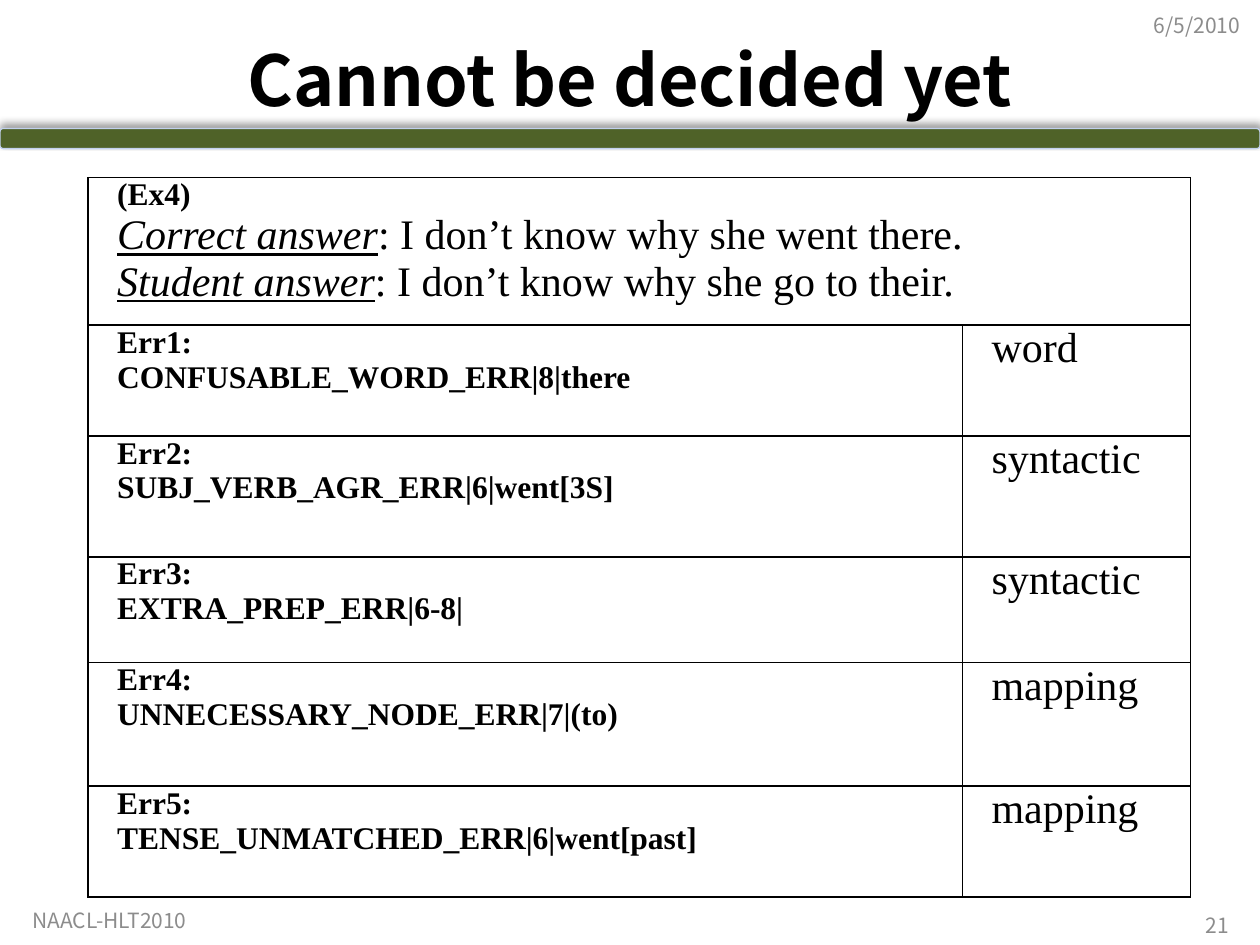
"""Build the slide on error tags that cannot be decided yet."""
from typing import NamedTuple

import lxml.etree
import pptx
import pptx.dml.color
import pptx.enum.shapes
import pptx.enum.text
import pptx.oxml
import pptx.oxml.ns
import pptx.util

Inches = pptx.util.Inches
Pt = pptx.util.Pt
Align = pptx.enum.text.PP_ALIGN
Anchor = pptx.enum.text.MSO_ANCHOR
SANS = "Noto Sans CJK KR"
SERIF = "Times New Roman"
GREY = "8C8C8C"
NS = pptx.oxml.ns.nsdecls("a")


class Label(NamedTuple):
    text: str
    left: float
    top: float
    width: float
    height: float
    size: int = 12
    color: str = GREY
    bold: bool = False
    align: Align = Align.LEFT


class Error(NamedTuple):
    name: str
    tag: str
    level: str


LABELS = [
    Label("Cannot be decided yet", 0.5, 0.23, 9, 0.79, 40, "000000", True, Align.CENTER),
    Label("6/5/2010", 9.06, 0, 0.94, 0.4),
    Label("NAACL-HLT2010", 0.16, 7.11, 3.24, 0.39),
    Label("21", 7.17, 7.19, 2.68, 0.31, align=Align.RIGHT),
]
ANSWERS = [
    ("Correct answer", ": I don’t know why she went there."),
    ("Student answer", ": I don’t know why she go to their."),
]
ERRORS = [
    Error("Err1:", "CONFUSABLE_WORD_ERR|8|there", "word"),
    Error("Err2:", "SUBJ_VERB_AGR_ERR|6|went[3S]", "syntactic"),
    Error("Err3:", "EXTRA_PREP_ERR|6-8|", "syntactic"),
    Error("Err4:", "UNNECESSARY_NODE_ERR|7|(to)", "mapping"),
    Error("Err5:", "TENSE_UNMATCHED_ERR|6|went[past]", "mapping"),
]
COLS = [6.94, 1.81]
ROWS = [1.17, 0.88, 0.96, 0.84, 0.98, 0.88]


def rgb(code: str) -> pptx.dml.color.RGBColor:
    """Turn a hex string into a colour."""
    return pptx.dml.color.RGBColor.from_string(code)


def style(para, face: str, size: int, color: str, bold: bool) -> None:
    """Set the font of a paragraph."""
    font = para.font
    font.name, font.size, font.bold = face, Pt(size), bold
    font.color.rgb = rgb(color)


def draw_bar(slide) -> None:
    """Draw the green bar with its upward shadow."""
    kind = pptx.enum.shapes.MSO_SHAPE.ROUNDED_RECTANGLE
    bar = slide.shapes.add_shape(kind, 0, Inches(1.02), Inches(10), Inches(0.16))
    bar.fill.solid()
    bar.fill.fore_color.rgb = rgb("4F6228")
    bar.line.color.rgb = rgb("C2D1ED")
    bar.line.width = Pt(0)
    bar.shadow.inherit = False
    glow = pptx.oxml.parse_xml(
        f'<a:outerShdw {NS} blurRad="{Pt(4)}" dist="{Pt(3)}" dir="16200000" rotWithShape="0">'
        '<a:srgbClr val="000000"><a:alpha val="40000"/></a:srgbClr></a:outerShdw>'
    )
    bar.element.spPr.find(pptx.oxml.ns.qn("a:effectLst")).append(glow)


def draw_label(slide, label: Label) -> None:
    """Draw one line of text centred in its box's height."""
    spot = map(Inches, (label.left, label.top, label.width, label.height))
    frame = slide.shapes.add_textbox(*spot).text_frame
    frame.word_wrap = True
    frame.vertical_anchor = Anchor.MIDDLE
    para = frame.paragraphs[0]
    para.text, para.alignment = label.text, label.align
    style(para, SANS, label.size, label.color, label.bold)


def add_line(cell, text: str, size: int, bold: bool = False, lead: str = "") -> None:
    """Add a paragraph to a cell, after an underlined lead if given."""
    frame = cell.text_frame
    para = frame.add_paragraph() if cell.text else frame.paragraphs[0]
    para.alignment = Align.JUSTIFY
    para._p.get_or_add_pPr().set("indent", str(Inches(0.16)))
    style(para, SERIF, size, "000000", bold)
    if lead:
        run = para.add_run()
        run.text = lead
        run.font.italic = run.font.underline = True
    para.add_run().text = text


def frame_cell(cell) -> None:
    """Give a cell black borders, narrow margins and no fill."""
    cell.margin_left = cell.margin_right = Inches(0.07)
    cell.margin_top = cell.margin_bottom = 0
    props = cell._tc.get_or_add_tcPr()
    for side in "LRTB":
        line = lxml.etree.SubElement(props, pptx.oxml.ns.qn(f"a:ln{side}"), w=str(Pt(1)))
        fill = lxml.etree.SubElement(line, pptx.oxml.ns.qn("a:solidFill"))
        lxml.etree.SubElement(fill, pptx.oxml.ns.qn("a:srgbClr"), val="000000")
    cell.fill.background()


def draw_table(slide) -> None:
    """Draw the example answers and the errors found in them."""
    spot = map(Inches, (0.7, 1.41, sum(COLS), sum(ROWS)))
    table = slide.shapes.add_table(len(ROWS), len(COLS), *spot).table
    table.first_row = table.horz_banding = False
    for col, width in zip(table.columns, COLS):
        col.width = Inches(width)
    for row, height in zip(table.rows, ROWS):
        row.height = Inches(height)
    for cell in table.iter_cells():
        frame_cell(cell)
    head = table.cell(0, 0)
    head.merge(table.cell(0, 1))
    add_line(head, "(Ex4)", 18, True)
    for lead, text in ANSWERS:
        add_line(head, text, 24, lead=lead)
    for row, error in enumerate(ERRORS, 1):
        add_line(table.cell(row, 0), error.name, 18, True)
        add_line(table.cell(row, 0), error.tag, 18, True)
        add_line(table.cell(row, 1), error.level, 24)


def main() -> None:
    """Build and save the slide."""
    deck = pptx.Presentation()
    deck.slide_width, deck.slide_height = Inches(10), Inches(7.5)
    slide = deck.slides.add_slide(deck.slide_layouts[6])
    draw_bar(slide)
    for label in LABELS:
        draw_label(slide, label)
    draw_table(slide)
    deck.save("out.pptx")


if __name__ == "__main__":
    main()
